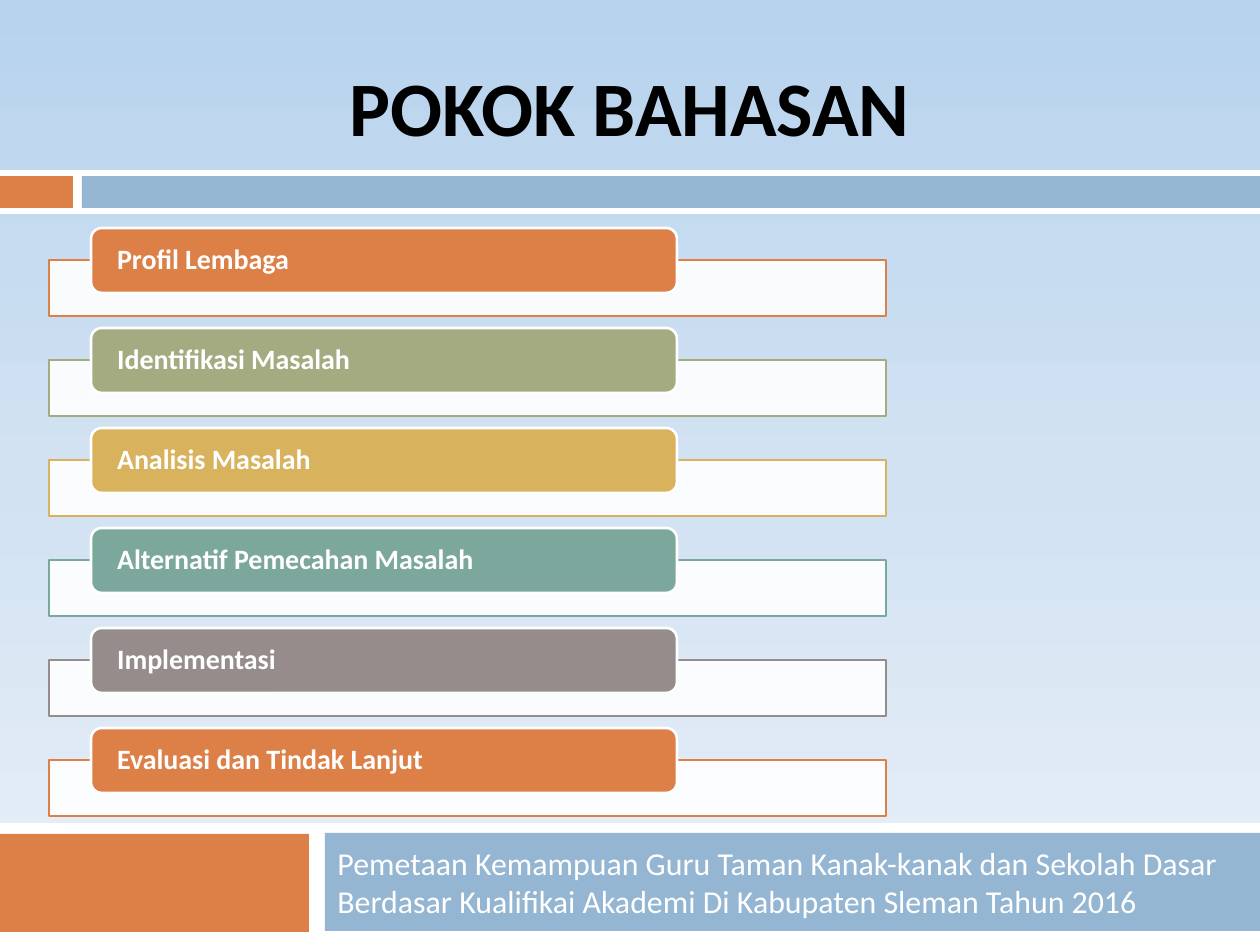
from copy import deepcopy

from lxml import etree
from pptx import Presentation
from pptx import util as u
from pptx.dml import color
from pptx.enum import shapes, text
from pptx.oxml import ns

COLORS = {
    "black": "000000",
    "white": "FFFFFF",
    "orange": "DD8047",
    "blue": "94B6D2",
    "olive": "A5AB81",
    "gold": "D8B25C",
    "teal": "7BA79D",
    "taupe": "968C8C",
    "sky_top": "B7D3ED",
    "sky_middle": "D2E2F2",
    "sky_bottom": "E8F0F8",
}
TOPICS = [
    ("Profil Lembaga", "orange"),
    ("Identifikasi Masalah", "olive"),
    ("Analisis Masalah", "gold"),
    ("Alternatif Pemecahan Masalah", "teal"),
    ("Implementasi", "taupe"),
    ("Evaluasi dan Tindak Lanjut", "orange"),
]
BANDS = [
    (0, 170, 1260, 44, "white"),
    (0, 176, 73, 32, "orange"),
    (82, 176, 1178, 32, "blue"),
    (0, 823, 1260, 122, "white"),
    (-1, 834, 310, 98, "orange"),
    (325, 833, 935, 98, "blue"),
]
TOPIC_TOP = 228
TOPIC_PITCH = 100


def px(n):
    return u.Emu(round(n * 914400 / 126))


def rgb(name):
    return color.RGBColor.from_string(COLORS[name])


class Deck:
    font = "Calibri"

    def __init__(self, prs):
        self.s = prs.slides.add_slide(prs.slide_layouts[5])

    def background(self, names):
        fill = self.s.background.fill
        fill.gradient()
        fill.gradient_angle = 270
        first = self.s.element.xpath(".//a:gsLst/a:gs")[0]
        first.addnext(deepcopy(first))
        for i, (stop, name) in enumerate(zip(fill.gradient_stops, names)):
            stop.position = i / (len(names) - 1)
            stop.color.rgb = rgb(name)

    def label(self, sp, words, size, name, bold=False, anchor=text.MSO_ANCHOR.MIDDLE,
              align=text.PP_ALIGN.LEFT):
        tf = sp.text_frame
        tf.word_wrap = True
        tf.auto_size = text.MSO_AUTO_SIZE.NONE
        tf.vertical_anchor = anchor
        p = tf.paragraphs[0]
        p.text = words
        p.alignment = align
        p.font.name = self.font
        p.font.size = u.Pt(size)
        p.font.bold = bold
        p.font.color.rgb = rgb(name)
        return p

    def title(self, words, x, y, w, h):
        sp = self.s.shapes.title
        sp.left, sp.top, sp.width, sp.height = map(px, (x, y, w, h))
        self.label(sp, words, 44, "black", True, text.MSO_ANCHOR.BOTTOM, text.PP_ALIGN.CENTER)

    def textbox(self, words, x, y, w, h, size):
        sp = self.s.shapes.add_textbox(*map(px, (x, y, w, h)))
        self.label(sp, words, size, "white").space_before = u.Pt(7)

    def box(self, x, y, w, h, fill, line=None, kind=shapes.MSO_SHAPE.RECTANGLE, opacity=100):
        sp = self.s.shapes.add_shape(kind, *map(px, (x, y, w, h)))
        sp.shadow.inherit = False
        sp.fill.solid()
        sp.fill.fore_color.rgb = rgb(fill)
        if opacity < 100:
            clr = sp.element.spPr.find(ns.qn("a:solidFill"))[0]
            etree.SubElement(clr, ns.qn("a:alpha"), val=str(opacity * 1000))
        if line:
            sp.line.color.rgb = rgb(line)
            sp.line.width = u.Pt(1.5)
        else:
            sp.line.fill.background()
        return sp

    def topic(self, words, y, name):
        self.box(49, y + 32, 837, 56, "white", name, opacity=90)
        sp = self.box(91, y, 586, 65, name, "white", shapes.MSO_SHAPE.ROUNDED_RECTANGLE)
        p = self.label(sp, words, 16, "white", True)
        p.line_spacing = 0.9
        tf = sp.text_frame
        tf.margin_left = tf.margin_right = px(23)
        tf.margin_top = tf.margin_bottom = 0


def main():
    prs = Presentation()
    prs.slide_width, prs.slide_height = px(1260), px(945)
    deck = Deck(prs)
    deck.background(["sky_top", "sky_middle", "sky_bottom"])
    for band in BANDS:
        deck.box(*band)
    deck.title("POKOK BAHASAN", 0, 0, 1260, 158)
    deck.textbox("Pemetaan Kemampuan Guru Taman Kanak-kanak dan Sekolah Dasar "
                 "Berdasar Kualifikai Akademi Di Kabupaten Sleman Tahun 2016",
                 325, 834, 924, 95, 18.2)
    for i, (words, name) in enumerate(TOPICS):
        deck.topic(words, TOPIC_TOP + i * TOPIC_PITCH, name)
    prs.save("out.pptx")


if __name__ == "__main__":
    main()
